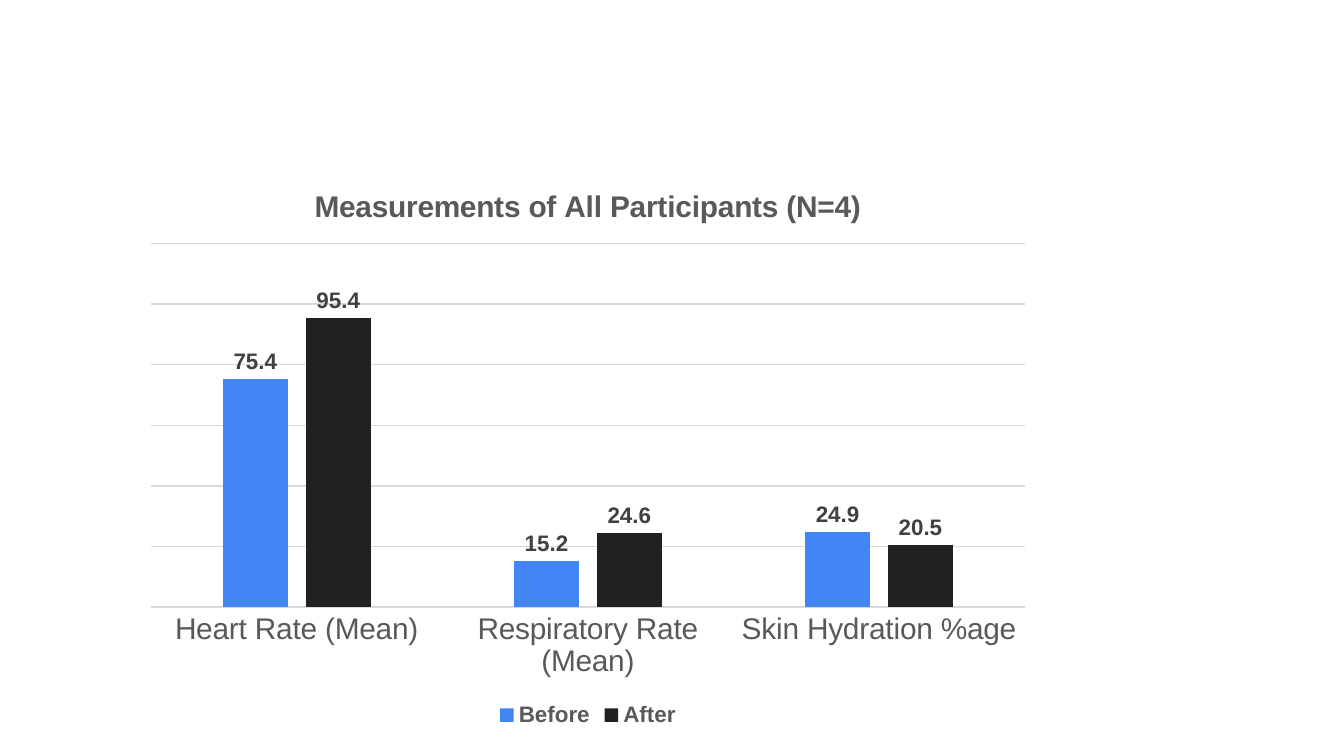
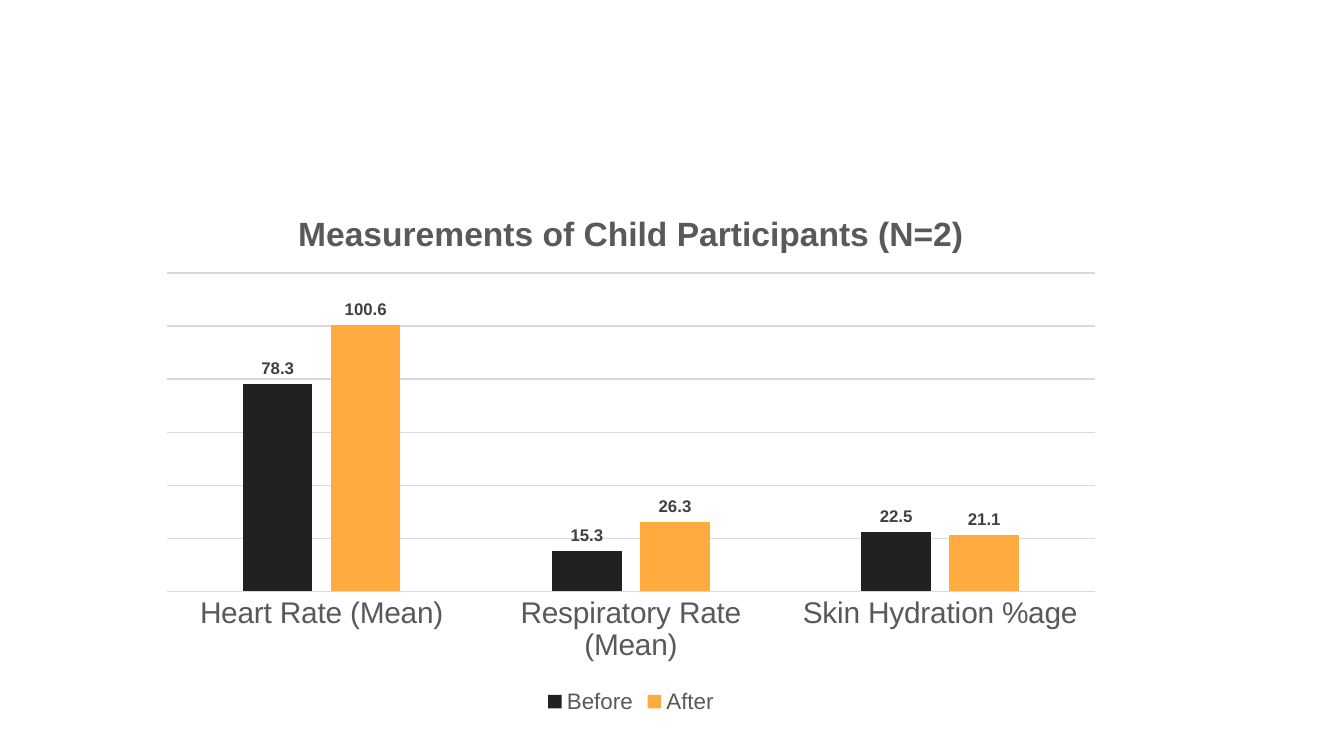
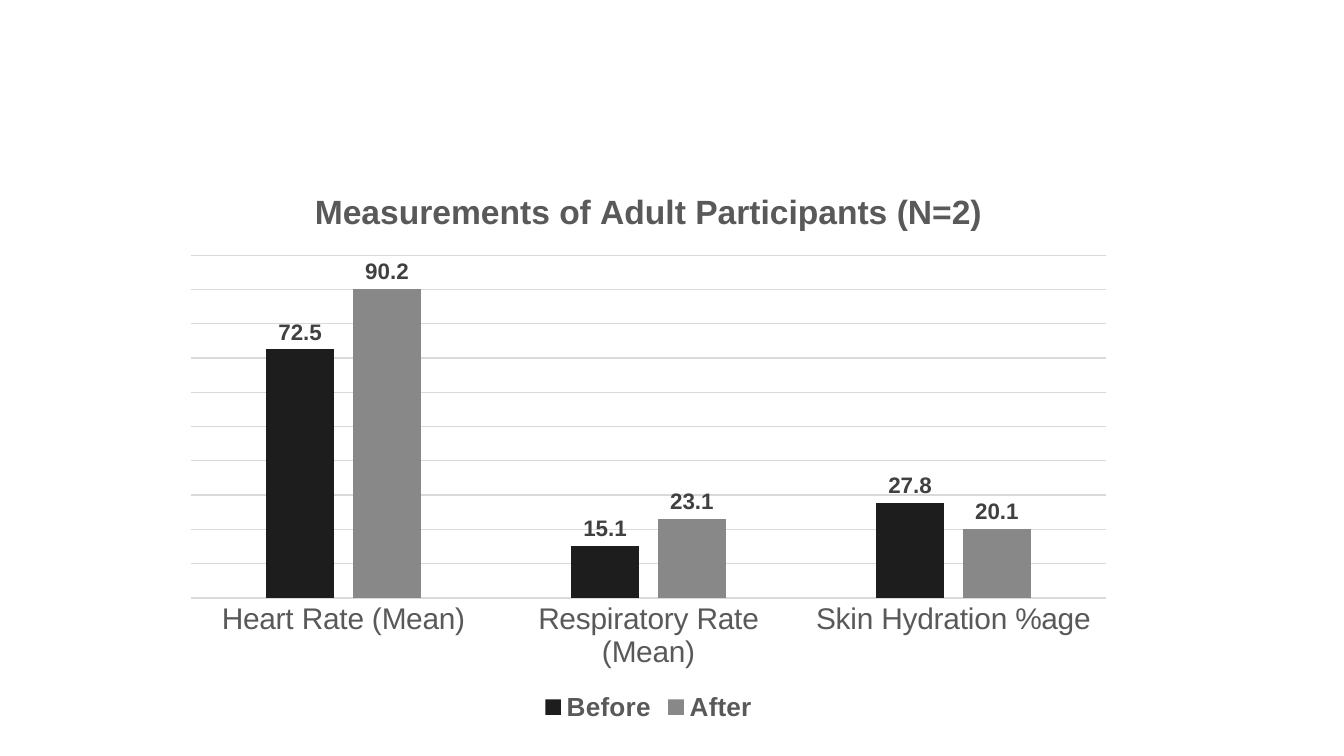
from lxml import etree
from pptx import Presentation
from pptx.chart.data import CategoryChartData
from pptx.dml.color import RGBColor
from pptx.enum.chart import XL_CHART_TYPE, XL_LABEL_POSITION, XL_LEGEND_POSITION, XL_TICK_MARK
from pptx.oxml.ns import qn
from pptx.util import Pt

BLUE = RGBColor(0x42, 0x85, 0xF4)
CHARCOAL = RGBColor(0x21, 0x21, 0x21)
ORANGE = RGBColor(0xFF, 0xAB, 0x40)
BLACK = RGBColor(0x1D, 0x1D, 0x1D)
GREY = RGBColor(0x88, 0x88, 0x88)
TEXT = RGBColor(0x59, 0x59, 0x59)
LABEL = RGBColor(0x40, 0x40, 0x40)
RULE = RGBColor(0xD9, 0xD9, 0xD9)

MEASURES = ["Heart Rate (Mean)", "Respiratory Rate (Mean)", "Skin Hydration %age"]


class MeasurementDeck:
    """Shared chart style and the current slide."""

    font_name = "Arial"

    def __init__(self):
        self.deck = Presentation()
        self.deck.slide_width, self.deck.slide_height = Pt(720), Pt(405)
        self.page = None

    def add_page(self):
        self.page = self.deck.slides.add_slide(self.deck.slide_layouts[6])

    def style_font(self, font, size, color=TEXT, bold=False):
        font.name, font.size, font.bold = self.font_name, Pt(size), bold
        font.color.rgb = color

    def style_line(self, line):
        line.color.rgb = RULE
        line.width = Pt(0.75)

    def add_column_chart(self, frame, before, after):
        data = CategoryChartData()
        data.categories = MEASURES
        data.add_series("Before", before)
        data.add_series("After", after)
        chart = self.page.shapes.add_chart(
            XL_CHART_TYPE.COLUMN_CLUSTERED, *(Pt(length) for length in frame), data).chart
        chart.font.name, chart.font.size = self.font_name, Pt(10)
        plot = chart.plots[0]
        plot.gap_width, plot.overlap, plot.vary_by_categories = 219, -27, False
        return chart

    def set_title(self, chart, title, size):
        para = chart.chart_title.text_frame.paragraphs[0]
        para.text = title
        self.style_font(para.font, size, bold=True)

    def set_axes(self, chart, maximum, step):
        measures, values = chart.category_axis, chart.value_axis
        measures.major_tick_mark = measures.minor_tick_mark = XL_TICK_MARK.NONE
        self.style_font(measures.tick_labels.font, 16)
        self.style_line(measures.format.line)
        values.minimum_scale, values.maximum_scale, values.major_unit = 0, maximum, step
        values.has_major_gridlines = True
        self.style_line(values.major_gridlines.format.line)
        values.visible = False

    def set_series(self, chart, colors, label_size):
        for series, color in zip(chart.plots[0].series, colors):
            series.format.fill.solid()
            series.format.fill.fore_color.rgb = color
            series.invert_if_negative = False
            labels = series.data_labels
            labels.show_value = True
            labels.position = XL_LABEL_POSITION.OUTSIDE_END
            self.style_font(labels.font, label_size, LABEL, bold=True)

    def set_legend(self, chart, size, bold):
        chart.has_legend = True
        chart.legend.position = XL_LEGEND_POSITION.BOTTOM
        chart.legend.include_in_layout = False
        self.style_font(chart.legend.font, size, bold=bold)

    def place_plot(self, chart, top, height):
        """Place the plot by fractions of the chart's frame."""
        area = chart.element.find(".//" + qn("c:plotArea"))
        for layout in area.findall(qn("c:layout")):
            area.remove(layout)
        layout = etree.Element(qn("c:layout"))
        manual = etree.SubElement(layout, qn("c:manualLayout"))
        settings = {"layoutTarget": "inner", "xMode": "edge", "yMode": "edge",
                    "x": 0.02, "y": top, "w": 0.96, "h": height}
        for name, value in settings.items():
            etree.SubElement(manual, qn("c:" + name)).set("val", str(value))
        area.insert(0, layout)


# One entry for each group of participants
GROUPS = [
    dict(title="Measurements of All Participants (N=4)", title_size=16,
         frame=(71.3, 87.8, 487.4, 304.6), plot=(0.14, 0.64), scale=(120, 20),
         before=(75.4, 15.2, 24.9), after=(95.4, 24.6, 20.5),
         colors=(BLUE, CHARCOAL), label_size=12, legend=(12, True)),
    dict(title="Measurements of Child Participants (N=2)", title_size=18,
         frame=(79.2, 100.8, 517.7, 284.4), plot=(0.16, 0.6), scale=(120, 20),
         before=(78.3, 15.3, 22.5), after=(100.6, 26.3, 21.1),
         colors=(CHARCOAL, ORANGE), label_size=9, legend=(12, False)),
    dict(title="Measurements of Adult Participants (N=2)", title_size=18,
         frame=(92.2, 88.6, 510.5, 301), plot=(0.16, 0.61), scale=(100, 10),
         before=(72.5, 15.1, 27.8), after=(90.2, 23.1, 20.1),
         colors=(BLACK, GREY), label_size=12, legend=(14, True)),
]


def main():
    report = MeasurementDeck()
    for group in GROUPS:
        report.add_page()
        chart = report.add_column_chart(group["frame"], group["before"], group["after"])
        report.set_title(chart, group["title"], group["title_size"])
        report.set_axes(chart, *group["scale"])
        report.set_series(chart, group["colors"], group["label_size"])
        report.set_legend(chart, *group["legend"])
        report.place_plot(chart, *group["plot"])
    report.deck.save("out.pptx")


if __name__ == "__main__":
    main()
